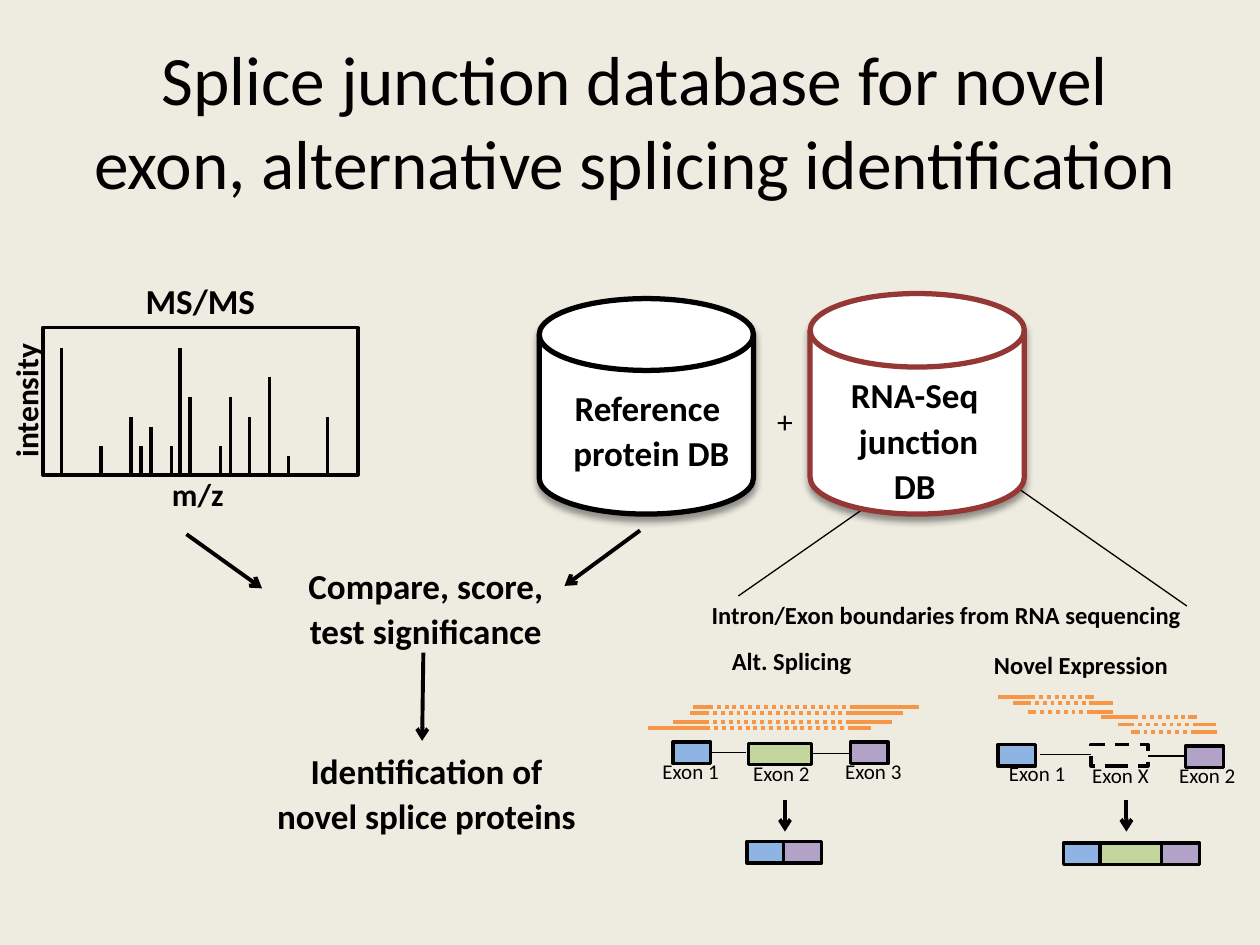
import pptx
import pptx.util
import pptx.dml.color
import pptx.enum.dml
import pptx.enum.shapes
import pptx.enum.text
import pptx.oxml
import pptx.oxml.ns

Inches = pptx.util.Inches
Pt = pptx.util.Pt
RGBColor = pptx.dml.color.RGBColor
SHAPE = pptx.enum.shapes.MSO_SHAPE
ALIGN = pptx.enum.text.PP_ALIGN
DASH = pptx.enum.dml.MSO_LINE

BLACK = RGBColor(0x00, 0x00, 0x00)
WHITE = RGBColor(0xFF, 0xFF, 0xFF)
CREAM = RGBColor(0xEE, 0xEC, 0xE1)
DARK_RED = RGBColor(0x95, 0x37, 0x35)
BLUE = RGBColor(0x8E, 0xB4, 0xE3)
GREEN = RGBColor(0xC3, 0xD6, 0x9B)
PURPLE = RGBColor(0xB3, 0xA2, 0xC7)
ORANGE = RGBColor(0xF7, 0x96, 0x46)
FONT = "Calibri"

deck = pptx.Presentation()
deck.slide_width, deck.slide_height = Inches(10), Inches(7.5)
page = deck.slides.add_slide(deck.slide_layouts[5])
page.background.fill.solid()
page.background.fill.fore_color.rgb = CREAM


def add_line(x1, y1, x2, y2, width, color=BLACK, dash=None, arrow=False):
    line = page.shapes.add_connector(
        pptx.enum.shapes.MSO_CONNECTOR.STRAIGHT,
        Inches(x1), Inches(y1), Inches(x2), Inches(y2))
    line.line.color.rgb = color
    line.line.width = Pt(width)
    if dash:
        line.line.dash_style = dash
    if arrow:
        head = pptx.oxml.parse_xml(
            '<a:tailEnd %s type="arrow"/>' % pptx.oxml.ns.nsdecls("a"))
        line.line._get_or_add_ln().append(head)
    line._element.spPr.append(pptx.oxml.parse_xml(
        "<a:effectLst %s/>" % pptx.oxml.ns.nsdecls("a")))


def add_label(text, left, top, width, height, size, bold=True,
              align=ALIGN.CENTER, wrap=False, spacing=None):
    box = page.shapes.add_textbox(
        Inches(left), Inches(top), Inches(width), Inches(height))
    box.text_frame.word_wrap = wrap
    box.text_frame.text = text
    for para in box.text_frame.paragraphs:
        para.alignment = align
        if spacing:
            para.line_spacing = Pt(spacing)
        para.font.name = FONT
        para.font.size = Pt(size)
        para.font.bold = bold
        para.font.color.rgb = BLACK
    return box


# Title, raised within its box by a deep bottom margin
title = page.shapes.title
title.left, title.top = Inches(0.54), Inches(0.5)
title.width, title.height = Inches(9), Inches(1.55)
frame = title.text_frame
frame.text = ("Splice junction database for novel exon, "
              "alternative splicing identification")
frame.word_wrap = True
frame.vertical_anchor = pptx.enum.text.MSO_ANCHOR.MIDDLE
frame.margin_bottom = Inches(0.7)
frame.paragraphs[0].alignment = ALIGN.CENTER
span = frame.paragraphs[0].runs[0]
span.font.name, span.font.size = FONT, Pt(39.6)
span.font.color.rgb = BLACK

# Workflow arrows and steps
for ends in [(1.48, 4.24, 2.08, 4.67), (5.08, 4.21, 4.48, 4.65),
             (3.36, 5.18, 3.35, 5.88), (6.23, 6.35, 6.23, 6.6),
             (8.94, 6.35, 8.94, 6.6)]:
    add_line(*ends, 2.25, arrow=True)
add_label("Compare, score, test significance", 2.15, 4.4, 2.46, 0.83, 20,
          wrap=True, spacing=26)
add_label("Identification of novel splice proteins", 2.07, 5.87, 2.63, 0.83, 20,
          wrap=True, spacing=26)

# MS/MS spectrum: peaks rise from a common baseline
spectrum = page.shapes.add_shape(
    SHAPE.RECTANGLE, Inches(0.34), Inches(2.6), Inches(2.5), Inches(1.17))
spectrum.shadow.inherit = False
spectrum.fill.background()
spectrum.line.color.rgb = BLACK
spectrum.line.width = Pt(2)
for x, peak in [(0.49, 2.76), (0.8, 3.54), (1.04, 3.31), (1.12, 3.54),
                (1.2, 3.39), (1.36, 3.54), (1.43, 2.76), (1.51, 3.15),
                (1.75, 3.54), (1.83, 3.15), (1.98, 3.31), (2.14, 2.99),
                (2.29, 3.62), (2.6, 3.31)]:
    add_line(x, peak, x, 3.78, 2)
add_label("m/z", 1.26, 3.72, 0.62, 0.4, 18)
add_label("intensity", -0.35, 2.98, 1.11, 0.4, 18).rotation = 270
add_label("MS/MS", 1.05, 2.17, 1.08, 0.44, 20)

# Callout lines run behind the junction database
add_line(5.86, 4.73, 7.28, 3.74, 0.75)
add_line(9.42, 4.81, 8, 3.82, 0.75)

# Databases
for left, top, height, color in [(4.28, 2.37, 1.71, BLACK),
                                 (6.43, 2.33, 1.75, DARK_RED)]:
    disk = page.shapes.add_shape(
        SHAPE.FLOWCHART_MAGNETIC_DISK,
        Inches(left), Inches(top), Inches(1.7), Inches(height))
    disk.fill.solid()
    disk.fill.fore_color.rgb = WHITE
    disk.line.color.rgb = color
    disk.line.width = Pt(3)
    disk._element.spPr.append(pptx.oxml.parse_xml(
        '<a:effectLst %s><a:outerShdw blurRad="%d" dist="%d" dir="5400000" '
        'rotWithShape="0"><a:srgbClr val="000000"><a:alpha val="40000"/>'
        "</a:srgbClr></a:outerShdw></a:effectLst>"
        % (pptx.oxml.ns.nsdecls("a"), Pt(4), Pt(3))))
add_label("Reference \nprotein DB", 3.94, 2.99, 2.46, 0.81, 20,
          wrap=True, spacing=26)
add_label("RNA-Seq\n junction\nDB", 6.03, 2.89, 2.46, 1.19, 20,
          wrap=True, spacing=26)
add_label("+", 6.07, 3.14, 0.33, 0.4, 18, bold=False, align=ALIGN.LEFT)

# Headings of the splicing panels
for text, left, top, width in [
        ("Intron/Exon boundaries from RNA sequencing", 5.55, 4.71, 3.95),
        ("Alt. Splicing", 5.71, 5.08, 1.16),
        ("Novel Expression", 7.79, 5.11, 1.59)]:
    add_label(text, left, top, width, 0.34, 14, align=ALIGN.LEFT)

# Introns
for x1, x2, y in [(5.62, 5.92, 5.97), (6.45, 6.75, 5.98),
                  (8.25, 8.66, 5.99), (9.11, 9.41, 6)]:
    add_line(x1, y, x2, y, 0.75)

# Exons, and the spliced products below; the novel exon is dashed
for left, top, width, color in [
        (5.34, 5.89, 0.3, BLUE), (5.94, 5.9, 0.5, GREEN),
        (6.75, 5.89, 0.3, PURPLE),
        (7.92, 5.91, 0.3, BLUE), (8.66, 5.91, 0.45, None),
        (9.41, 5.92, 0.3, PURPLE),
        (5.93, 6.68, 0.3, BLUE), (6.22, 6.68, 0.3, PURPLE),
        (8.44, 6.69, 0.3, BLUE), (8.73, 6.69, 0.5, GREEN),
        (9.22, 6.69, 0.3, PURPLE)]:
    exon = page.shapes.add_shape(
        SHAPE.RECTANGLE, Inches(left), Inches(top), Inches(width), Inches(0.17))
    exon.shadow.inherit = False
    exon.line.color.rgb = BLACK
    exon.line.width = Pt(2)
    if color:
        exon.fill.solid()
        exon.fill.fore_color.rgb = color
    else:
        exon.fill.background()
        exon.line.dash_style = DASH.DASH

for text, left, top in [("Exon 1", 5.16, 5.97), ("Exon 2", 5.88, 5.99),
                        ("Exon 3", 6.61, 5.97), ("Exon 1", 7.91, 5.99),
                        ("Exon X", 8.57, 6), ("Exon 2", 9.26, 6)]:
    add_label(text, left, top, 0.66, 0.3, 12, bold=False, align=ALIGN.LEFT)

# Reads: solid left end, dotted gap, solid right end
for y, left, left_end, gap_start, gap_end, right_start, right in [
        (5.73, 5.34, 5.61, 5.61, 6.81, 6.73, 7.08),
        (5.66, 5.48, 5.61, 5.61, 6.81, 6.73, 7.17),
        (5.61, 5.5, 5.64, 5.64, 6.84, 6.76, 7.29),
        (5.78, 5.14, 5.62, 5.62, 6.82, 6.74, 6.91),
        (5.81, 8.98, 9.03, 9.03, 9.48, 9.46, 9.66),
        (5.75, 8.87, 8.99, 8.93, 9.5, 9.47, 9.65),
        (5.69, 8.74, 9.03, 8.81, 9.47, 9.43, 9.5),
        (5.58, 8.04, 8.17, 8.11, 8.68, 8.64, 8.83),
        (5.53, 7.92, 8.21, 7.99, 8.65, 8.61, 8.68),
        (5.65, 8.16, 8.21, 8.21, 8.66, 8.63, 8.83)]:
    add_line(right, y, right_start, y, 2.25, ORANGE)
    add_line(left_end, y, left, y, 2.25, ORANGE)
    add_line(gap_end, y, gap_start, y, 2.25, ORANGE, DASH.ROUND_DOT)

deck.save("out.pptx")
